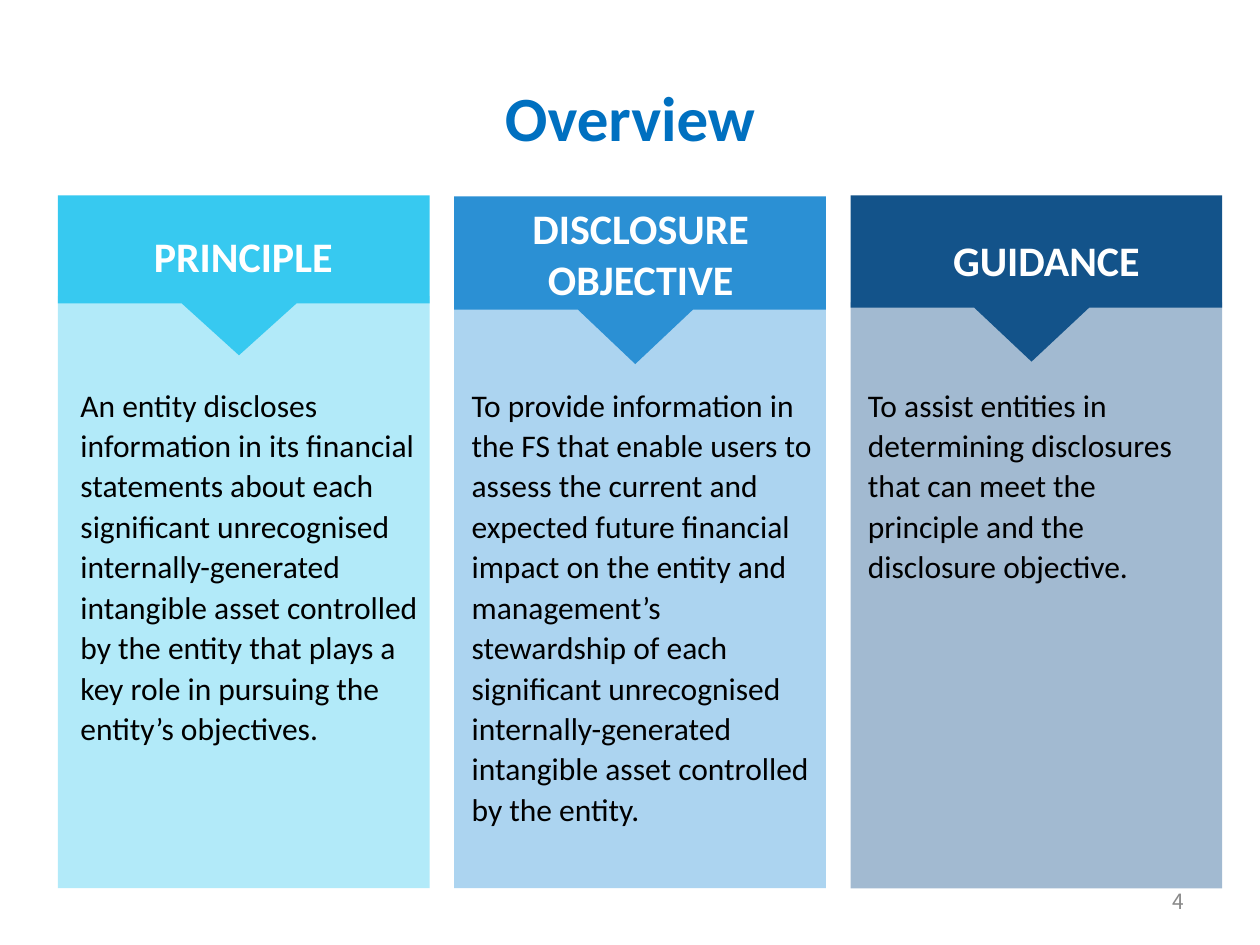
from dataclasses import dataclass

from pptx import Presentation
from pptx.dml.color import RGBColor
from pptx.enum.shapes import MSO_SHAPE
from pptx.enum.text import MSO_ANCHOR, MSO_AUTO_SIZE, PP_ALIGN
from pptx.util import Inches, Pt

# Colours
TITLE_BLUE = RGBColor(0x00, 0x70, 0xC0)
WHITE = RGBColor(0xFF, 0xFF, 0xFF)
BLACK = RGBColor(0x00, 0x00, 0x00)
NUMBER_GREY = RGBColor(0x89, 0x89, 0x89)
CYAN, PALE_CYAN = RGBColor(0x37, 0xC9, 0xF0), RGBColor(0xB2, 0xEA, 0xF9)
BLUE, PALE_BLUE = RGBColor(0x2B, 0x90, 0xD4), RGBColor(0xAC, 0xD4, 0xF0)
NAVY, PALE_NAVY = RGBColor(0x13, 0x53, 0x8A), RGBColor(0xA2, 0xBA, 0xD1)

# Column grid, in inches
FIRST_LEFT, COLUMN_STEP, COLUMN_WIDTH = 0.46, 3.145, 2.95
PANEL_BOTTOM = 7.05
BODY_TOP = 2.99

# Banner outline, as shares of its width and height
BANNER_OUTLINE = [(0, 0), (1, 0), (1, 0.676), (0.642, 0.676),
                  (0.487, 1), (0.333, 0.676), (0, 0.676)]


@dataclass
class Column:
    heading: str
    body: str
    banner_colour: RGBColor
    panel_colour: RGBColor
    panel_top: float
    banner_top: float
    banner_height: float
    heading_box: tuple
    body_inset: float
    body_width: float
    body_height: float


COLUMNS = [
    Column("PRINCIPLE",
           "An entity discloses information in its financial statements about "
           "each significant unrecognised internally-generated intangible asset "
           "controlled by the entity that plays a key role in pursuing the "
           "entity’s objectives.",
           CYAN, PALE_CYAN, 2.35, 1.55, 1.27,
           (1.07, 1.78, 1.72, 0.5), 0.08, 2.95, 3),
    Column("DISCLOSURE OBJECTIVE",
           "To provide information in the FS that enable users to assess the "
           "current and expected future financial impact on the entity and "
           "management’s stewardship of each significant unrecognised "
           "internally-generated intangible asset controlled by the entity.",
           BLUE, PALE_BLUE, 2.45, 1.56, 1.33,
           (3.61, 1.56, 2.95, 0.91), 0.04, 2.95, 3.65),
    Column("GUIDANCE",
           "To assist entities in determining disclosures that can meet the "
           "principle and the disclosure objective.",
           NAVY, PALE_NAVY, 2.4, 1.55, 1.32,
           (7.25, 1.81, 2.11, 0.5), 0.04, 2.91, 1.71),
]


def write(paragraph, text, size, colour, align, bold=False, font="Calibri"):
    paragraph.alignment = align
    run = paragraph.add_run()
    run.text = text
    run.font.name = font
    run.font.size = Pt(size)
    run.font.bold = bold
    run.font.color.rgb = colour


def paint(shape, colour):
    shape.fill.solid()
    shape.fill.fore_color.rgb = colour
    shape.line.fill.background()
    shape.shadow.inherit = False


def add_title(slide, text):
    title = slide.shapes.title
    title.left, title.top, title.width, title.height = map(
        Inches, (0.5, 0.3, 9, 1.25))
    title.text_frame.vertical_anchor = MSO_ANCHOR.MIDDLE
    write(title.text_frame.paragraphs[0], text, 36, TITLE_BLUE,
          PP_ALIGN.CENTER, bold=True)


def add_panel(slide, left, top, colour):
    panel = slide.shapes.add_shape(
        MSO_SHAPE.RECTANGLE, Inches(left), Inches(top),
        Inches(COLUMN_WIDTH), Inches(PANEL_BOTTOM - top))
    paint(panel, colour)


def add_banner(slide, left, top, height, colour):
    points = [(Inches(left + x * COLUMN_WIDTH), Inches(top + y * height))
              for x, y in BANNER_OUTLINE]
    builder = slide.shapes.build_freeform(*points[0])
    builder.add_line_segments(points[1:], close=True)
    paint(builder.convert_to_shape(), colour)


def add_text_frame(slide, box, auto_size=MSO_AUTO_SIZE.SHAPE_TO_FIT_TEXT):
    frame = slide.shapes.add_textbox(*map(Inches, box)).text_frame
    frame.word_wrap = True
    frame.auto_size = auto_size
    return frame


def add_column(slide, left, column):
    add_panel(slide, left, column.panel_top, column.panel_colour)
    add_banner(slide, left, column.banner_top, column.banner_height,
               column.banner_colour)

    heading = add_text_frame(slide, column.heading_box).paragraphs[0]
    write(heading, column.heading, 24, WHITE, PP_ALIGN.CENTER, bold=True)

    body = add_text_frame(slide, (left + column.body_inset, BODY_TOP,
                                  column.body_width, column.body_height)).paragraphs[0]
    body.line_spacing = 1.07
    body.space_after = Pt(8)
    write(body, column.body, 18, BLACK, PP_ALIGN.LEFT)


def add_slide_number(slide, number):
    frame = add_text_frame(slide, (7.17, 6.95, 2.33, 0.4), MSO_AUTO_SIZE.NONE)
    frame.vertical_anchor = MSO_ANCHOR.MIDDLE
    write(frame.paragraphs[0], number, 12, NUMBER_GREY, PP_ALIGN.RIGHT,
          font="Noto Sans CJK JP")


def main():
    deck = Presentation()
    deck.slide_width, deck.slide_height = Inches(10), Inches(7.5)
    slide = deck.slides.add_slide(deck.slide_layouts[5])

    add_title(slide, "Overview")
    for index, column in enumerate(COLUMNS):
        add_column(slide, FIRST_LEFT + index * COLUMN_STEP, column)
    add_slide_number(slide, "4")

    deck.save("out.pptx")


if __name__ == "__main__":
    main()
